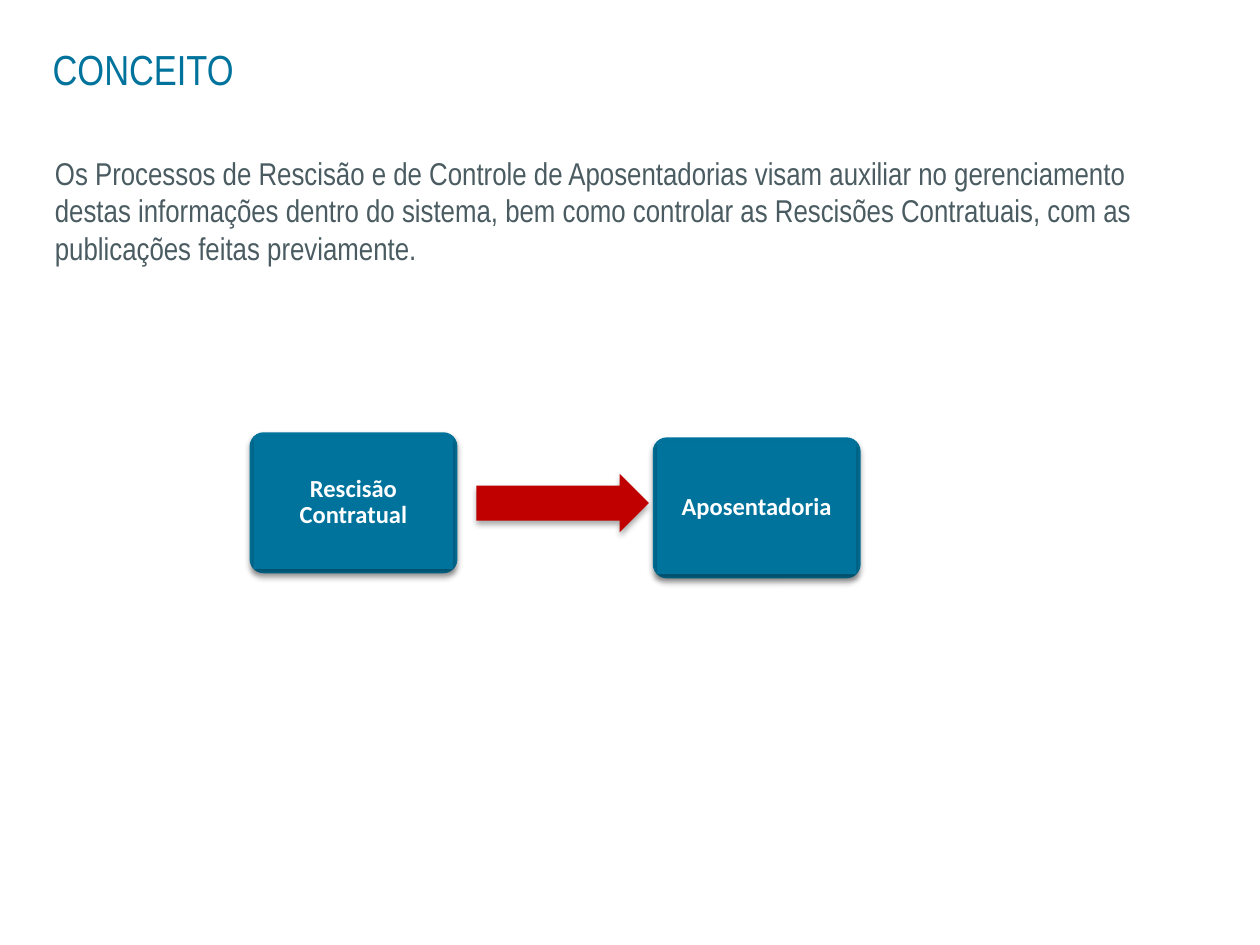
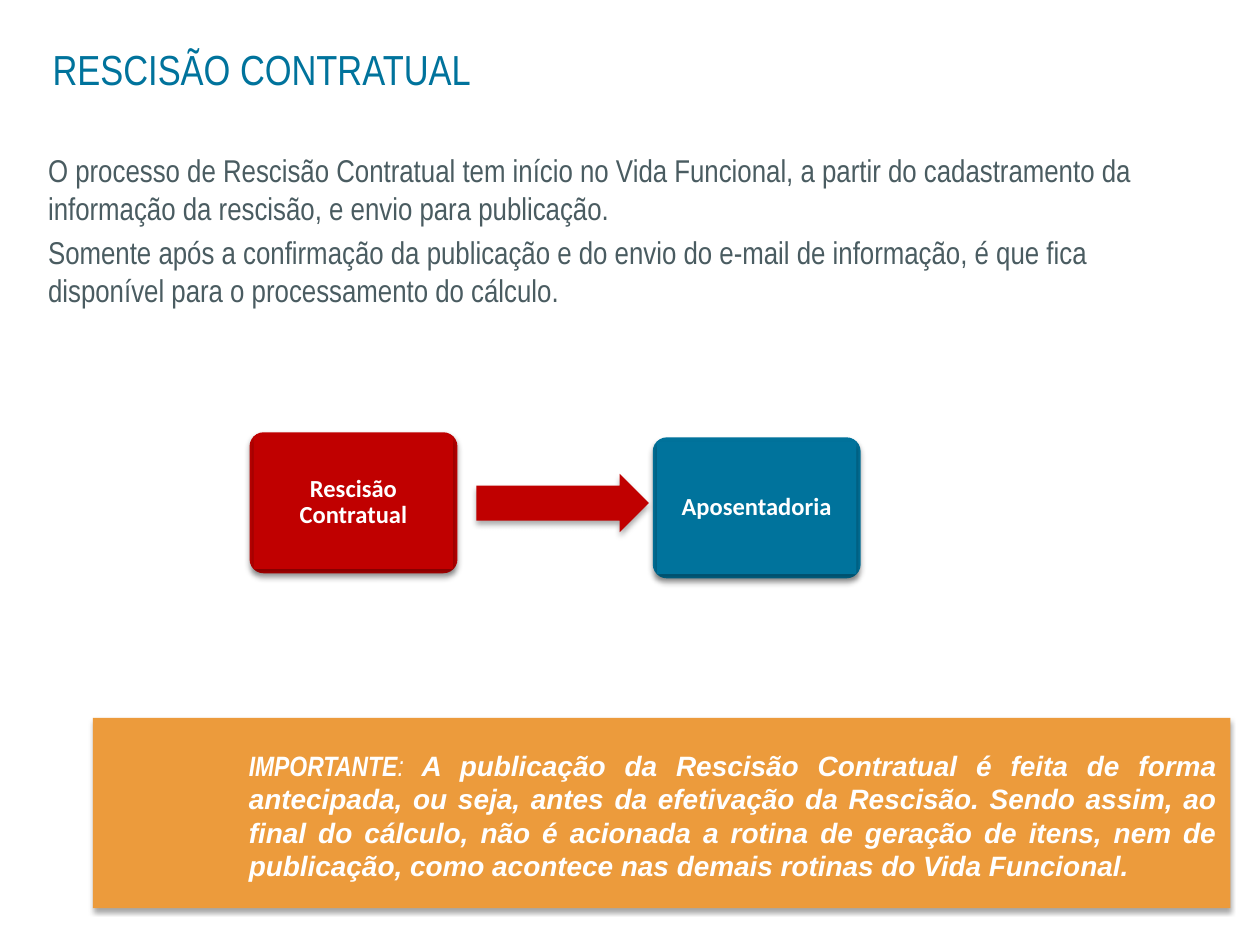
from lxml import etree
from pptx import Presentation
from pptx.dml.color import RGBColor
from pptx.enum.shapes import MSO_SHAPE
from pptx.enum.text import MSO_ANCHOR, PP_ALIGN
from pptx.oxml.ns import qn
from pptx.util import Pt

RECT = MSO_SHAPE.RECTANGLE
ROUNDED = MSO_SHAPE.ROUNDED_RECTANGLE
ARROW = MSO_SHAPE.RIGHT_ARROW
TOP, MIDDLE = MSO_ANCHOR.TOP, MSO_ANCHOR.MIDDLE
LEFT, CENTER, JUSTIFY = PP_ALIGN.LEFT, PP_ALIGN.CENTER, PP_ALIGN.JUSTIFY

BLUE, RED, ORANGE = "00739C", "C00000", "EC9B3C"
GREY, WHITE = "4A5C61", "FFFFFF"
NARROW = "Arial Narrow"

SLIDES = [
    {
        "title": "CONCEITO",
        "body_at": (26.9, 85.5, 666.7, 104.4),
        "body": [
            "Os Processos de Rescisão e de Controle de Aposentadorias visam auxiliar "
            "no gerenciamento destas informações dentro do sistema, bem como controlar "
            "as Rescisões Contratuais, com as publicações feitas previamente.",
        ],
        "step_colors": [BLUE, BLUE],
    },
    {
        "title": "RESCISÃO CONTRATUAL",
        "body_at": (23, 84, 666.7, 247.7),
        "body": [
            "O processo de Rescisão Contratual tem início no Vida Funcional, a partir "
            "do cadastramento da informação da rescisão, e envio para publicação.",
            "Somente após a confirmação da publicação e do envio do e-mail de "
            "informação, é que fica disponível para o processamento do cálculo.",
        ],
        "step_colors": [RED, BLUE],
        "warning": [
            ("IMPORTANTE", {}),
            (": ", {"bold": False}),
            ("A publicação da Rescisão Contratual é feita de forma antecipada, ou seja, "
             "antes da efetivação da Rescisão. Sendo assim, ao final do cálculo, não é "
             "acionada a rotina de geração de itens, nem de publicação, como acontece "
             "nas demais rotinas do Vida Funcional.", {"font": "Arial"}),
        ],
    },
]

STEPS = [("Rescisão Contratual", 142.6, 247), ("Aposentadoria", 373, 249.9)]
STEP_SIZE = (118.8, 80.6)
STEP_INSET = 2.4
ARROW_AT = (272.2, 270.8, 98.6, 33.3)
TITLE_AT = (23, 21.5, 650, 47.5)
WARNING_BAND_AT = (53.1, 410.2, 650, 108.7)
WARNING_TEXT_AT = (135.1, 424, 567.4, 85)


def rgb(color):
    return RGBColor.from_string(color)


def write(holder, paragraphs, size=18, font=NARROW, color=GREY, bold=False,
          italic=False, align=LEFT, anchor=TOP, margins=(7.2, 3.6),
          line_spacing=None, gap=0):
    frame = holder.text_frame
    frame.word_wrap = True
    frame.vertical_anchor = anchor
    frame.margin_left = frame.margin_right = Pt(margins[0])
    frame.margin_top = frame.margin_bottom = Pt(margins[1])
    for index, runs in enumerate(paragraphs):
        paragraph = frame.add_paragraph() if index else frame.paragraphs[0]
        paragraph.alignment = align
        if line_spacing:
            paragraph.line_spacing = line_spacing
        if index:
            paragraph.space_before = Pt(gap)
        for words, changes in [(runs, {})] if isinstance(runs, str) else runs:
            run = paragraph.add_run()
            run.text = words
            run.font.size = Pt(size)
            run.font.name = changes.get("font", font)
            run.font.bold = changes.get("bold", bold)
            run.font.italic = italic
            run.font.color.rgb = rgb(color)


def add_text(slide, at, paragraphs, **style):
    write(slide.shapes.add_textbox(*map(Pt, at)), paragraphs, **style)


def add_block(slide, kind, at, color, adjustments=(), blur=3.5, distance=2.2, alpha=32):
    block = slide.shapes.add_shape(kind, *map(Pt, at))
    for index, value in enumerate(adjustments):
        block.adjustments[index] = value
    block.fill.solid()
    block.fill.fore_color.rgb = rgb(color)
    block.line.fill.background()
    block.shadow.inherit = False
    effects = block.element.spPr.find(qn("a:effectLst"))
    shadow = etree.SubElement(effects, qn("a:outerShdw"), blurRad=str(Pt(blur)),
                              dist=str(Pt(distance)), dir="5400000", rotWithShape="0")
    tint = etree.SubElement(shadow, qn("a:srgbClr"), val="000000")
    etree.SubElement(tint, qn("a:alpha"), val=str(alpha * 1000))
    return block


def add_step(slide, label, left, top, color):
    width, height = STEP_SIZE
    add_block(slide, ROUNDED, (left, top, width, height), color, [0.1])
    inner = (left + STEP_INSET, top + STEP_INSET,
             width - 2 * STEP_INSET, height - 2 * STEP_INSET)
    face = add_block(slide, RECT, inner, color)
    write(face, [label], size=14, font="Calibri", color=WHITE, bold=True,
          align=CENTER, anchor=MIDDLE, margins=(4.2, 4.2), line_spacing=0.9)


def build_slide(deck, content):
    slide = deck.slides.add_slide(deck.slide_layouts[6])
    add_text(slide, content["body_at"], content["body"], margins=(4.5, 2.3), gap=3.6)
    add_text(slide, TITLE_AT, [content["title"]], size=24, color=BLUE)
    if "warning" in content:
        add_block(slide, RECT, WARNING_BAND_AT, ORANGE, blur=3.1, distance=1.8, alpha=35)
        add_text(slide, WARNING_TEXT_AT, [content["warning"]], size=16, color=WHITE,
                 bold=True, italic=True, align=JUSTIFY)
    for (label, left, top), color in zip(STEPS, content["step_colors"]):
        add_step(slide, label, left, top, color)
    add_block(slide, ARROW, ARROW_AT, RED, [0.6, 0.5])


def main():
    deck = Presentation()
    deck.slide_width, deck.slide_height = Pt(720), Pt(540)
    for content in SLIDES:
        build_slide(deck, content)
    deck.save("out.pptx")


if __name__ == "__main__":
    main()
